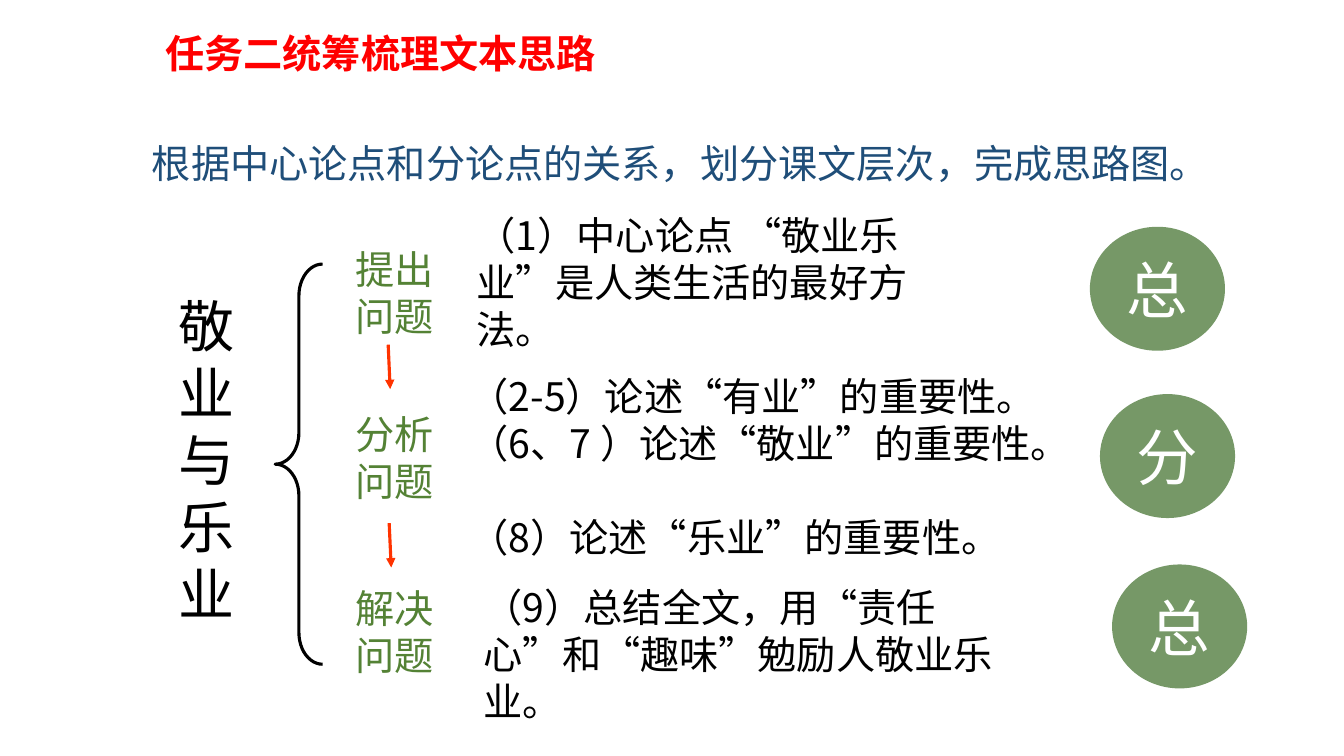
from lxml import etree
from pptx import Presentation, util as u
from pptx.dml.color import RGBColor
from pptx.enum import shapes, text
from pptx.oxml.ns import qn

RED = RGBColor(0xFF, 0x00, 0x00)
ARROW_RED = RGBColor(0xFF, 0x33, 0x00)
NAVY = RGBColor(0x1F, 0x4E, 0x79)
GREEN = RGBColor(0x54, 0x82, 0x35)
SAGE = RGBColor(0x76, 0x98, 0x67)
BLACK = RGBColor(0x00, 0x00, 0x00)
WHITE = RGBColor(0xFF, 0xFF, 0xFF)
CJK = "Noto Sans CJK SC"

prs = Presentation()
prs.slide_width, prs.slide_height = u.Inches(13.33), u.Inches(7.5)
slide = prs.slides.add_slide(prs.slide_layouts[5])


def add_run(paragraph, words, size, color, latin=CJK, bold=False):
    run = paragraph.add_run()
    run.text = words
    font = run.font
    font.size, font.bold, font.name = u.Pt(size), bold, latin
    font.color.rgb = color
    etree.SubElement(run._r.rPr, qn("a:ea")).set("typeface", CJK)


def add_lines(box, lines, size, color):
    """Write one paragraph per line; box is left, top, width, height in inches."""
    frame = slide.shapes.add_textbox(*map(u.Inches, box)).text_frame
    frame.word_wrap = True
    for i, line in enumerate(lines):
        paragraph = frame.add_paragraph() if i else frame.paragraphs[0]
        add_run(paragraph, line, size, color)
    return frame


# Title
title = slide.shapes.title
title.left, title.top, title.width, title.height = map(u.Inches, (1.54, 0.24, 5.56, 1.04))
title_frame = title.text_frame
title_frame.auto_size = text.MSO_AUTO_SIZE.NONE
title_frame.vertical_anchor = text.MSO_ANCHOR.TOP
heading = title_frame.paragraphs[0]
heading.alignment = text.PP_ALIGN.LEFT
add_run(heading, "任务二", 28, RED, bold=True)
add_run(heading, "统筹梳理文本思路", 28, RED, latin="Calibri", bold=True)

# Instruction
instruction = add_lines((0.62, 1.07, 12.26, 1.1),
                        ["根据中心论点和分论点的关系，划分课文层次，完成思路图。"], 28, NAVY)
instruction.vertical_anchor = text.MSO_ANCHOR.MIDDLE
instruction.paragraphs[0].alignment = text.PP_ALIGN.CENTER

# Essay name, one character per line, and its brace
essay = add_lines((1.67, 2.84, 0.76, 3.47), "敬业与乐业", 40, BLACK)
essay.word_wrap = False
brace = slide.shapes.add_shape(shapes.MSO_SHAPE.LEFT_BRACE,
                               *map(u.Inches, (2.73, 2.62, 0.47, 3.97)))
brace.shadow.inherit = False
brace.adjustments[0] = 0.667
brace.fill.background()
brace.line.color.rgb = BLACK
brace.line.width = u.Pt(2.25)

# Stages of the argument
for top, stage in ((2.38, ["提出", "问题"]), (4.02, ["分析问题"]), (5.75, ["解决问题"])):
    add_lines((3.43, top, 1.07, 1.04), stage, 28, GREEN)

# Arrows between the stages
for x, y in ((3.85, 3.42), (3.86, 5.19)):
    arrow = slide.shapes.add_connector(shapes.MSO_CONNECTOR.STRAIGHT,
                                       *map(u.Inches, (x, y, x + 0.02, y + 0.44)))
    arrow.line.color.rgb = ARROW_RED
    arrow.line.width = u.Pt(2.25)
    etree.SubElement(arrow.line._get_or_add_ln(), qn("a:tailEnd")).set("type", "triangle")
    etree.SubElement(arrow._element.spPr, qn("a:effectLst"))

# What each group of paragraphs says
add_lines((4.63, 2.05, 4.79, 1.04), ["（1）中心论点 “敬业乐业”是人类生活的最好方法。"], 28, BLACK)
analysis = add_lines((4.56, 3.64, 6.53, 1.51),
                     ["（2-5）论述“有业”的重要性。",
                      "（6、7 ）论述“敬业”的重要性。",
                      "（8）论述“乐业”的重要性。"], 28, BLACK)
analysis.paragraphs[2].space_before = u.Pt(34)
add_lines((4.7, 5.74, 5.56, 1.04),
          ["（9）总结全文，用“责任心”和“趣味”勉励人敬业乐业。"], 28, BLACK)

# Structure: whole, parts, whole
for left, top, role in ((10.81, 2.25, "总"), (10.91, 3.91, "分"), (11.03, 5.6, "总")):
    circle = slide.shapes.add_shape(shapes.MSO_SHAPE.OVAL,
                                    *map(u.Inches, (left, top, 1.34, 1.23)))
    circle.shadow.inherit = False
    circle.fill.solid()
    circle.fill.fore_color.rgb = SAGE
    circle.line.fill.background()
    circle.text_frame.vertical_anchor = text.MSO_ANCHOR.MIDDLE
    label = circle.text_frame.paragraphs[0]
    label.alignment = text.PP_ALIGN.CENTER
    add_run(label, role, 44, WHITE)

prs.save("out.pptx")
